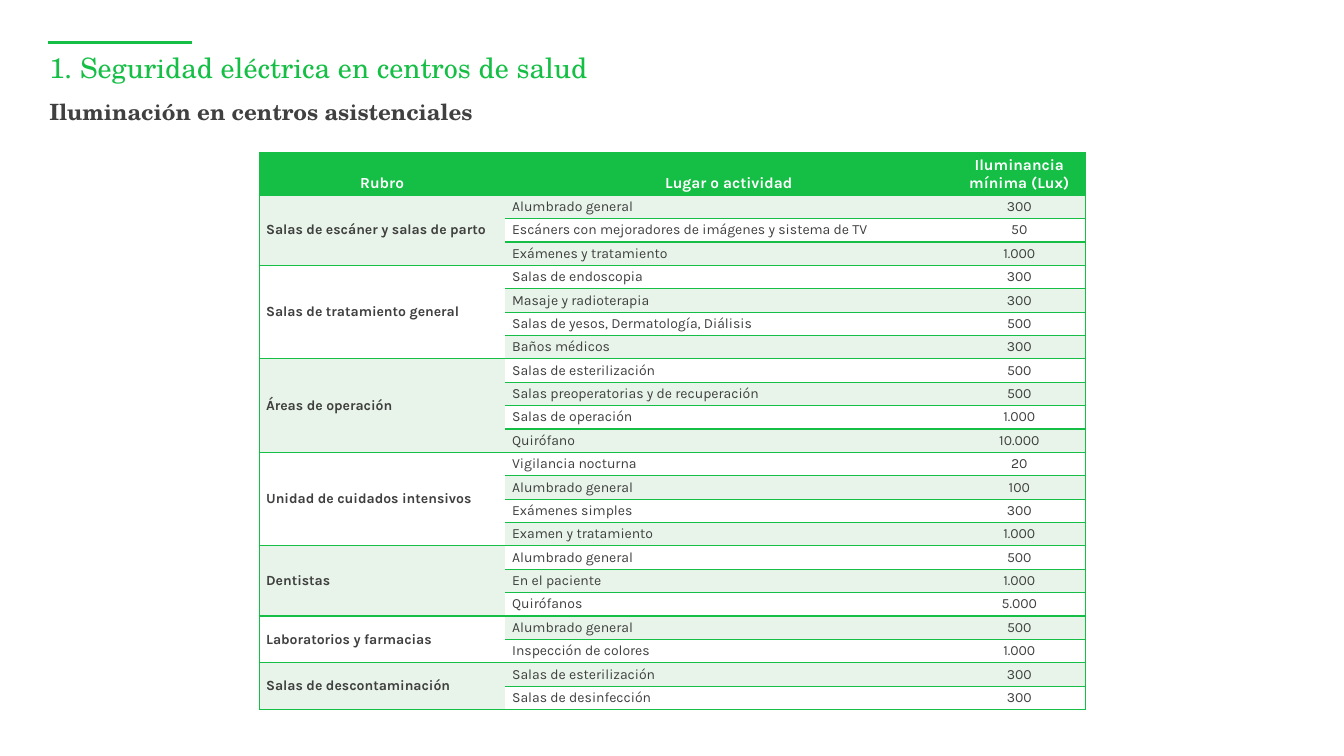
from dataclasses import dataclass

from lxml import etree
from pptx import Presentation
from pptx.dml import color
from pptx.enum import shapes, text
from pptx.oxml import ns
from pptx.util import Inches, Pt


@dataclass(frozen=True)
class Theme:
    green: str = "15BF45"
    tint: str = "E8F4E9"
    white: str = "FFFFFF"
    dark: str = "404040"
    table_text: str = "3F3F3F"
    serif: str = "TeX Gyre Schola"
    sans: str = "Karla"
    title_size: float = 20
    subtitle_size: float = 16
    header_size: float = 11
    body_size: float = 10
    accent_width: float = 1.75
    border_width: float = 1


THEME = Theme()
NO_STYLE = "{2D5ABB26-0587-4C30-8999-92F81FD0307C}"
HEADERS = ("Rubro", "Lugar o actividad", "Iluminancia mínima (Lux)")
COLUMN_WIDTHS = (2.44, 4.44, 1.32)
HEADER_HEIGHT = 0.42
GROUPS = (
    ("Salas de escáner y salas de parto", (
        ("Alumbrado general", "300"),
        ("Escáners con mejoradores de imágenes y sistema de TV", "50"),
        ("Exámenes y tratamiento", "1.000"))),
    ("Salas de tratamiento general", (
        ("Salas de endoscopia", "300"),
        ("Masaje y radioterapia", "300"),
        ("Salas de yesos, Dermatología, Diálisis", "500"),
        ("Baños médicos", "300"))),
    ("Áreas de operación", (
        ("Salas de esterilización", "500"),
        ("Salas preoperatorias y de recuperación", "500"),
        ("Salas de operación", "1.000"),
        ("Quirófano", "10.000"))),
    ("Unidad de cuidados intensivos", (
        ("Vigilancia nocturna", "20"),
        ("Alumbrado general", "100"),
        ("Exámenes simples", "300"),
        ("Examen y tratamiento", "1.000"))),
    ("Dentistas", (
        ("Alumbrado general", "500"),
        ("En el paciente", "1.000"),
        ("Quirófanos", "5.000"))),
    ("Laboratorios y farmacias", (
        ("Alumbrado general", "500"),
        ("Inspección de colores", "1.000"))),
    ("Salas de descontaminación", (
        ("Salas de esterilización", "300"),
        ("Salas de desinfección", "300"))),
)


def rgb(value):
    return color.RGBColor.from_string(value)


def write(frame, words, *, font, size, fill, bold=False, align="LEFT", spacing=1.0):
    frame.word_wrap = True
    paragraph = frame.paragraphs[0]
    paragraph.alignment = getattr(text.PP_ALIGN, align)
    paragraph.line_spacing = spacing
    run = paragraph.add_run()
    run.text = words
    run.font.name = font
    run.font.size = Pt(size)
    run.font.bold = bold
    run.font.color.rgb = rgb(fill)


def add_heading(slide, left, top, width, height, words, **style):
    frame = slide.shapes.add_textbox(
        Inches(left), Inches(top), Inches(width), Inches(height)).text_frame
    frame.margin_left = frame.margin_right = frame.margin_top = frame.margin_bottom = 0
    write(frame, words, font=THEME.serif, spacing=0.9, **style)


def add_title_block(slide, left, top, width):
    accent = slide.shapes.add_connector(
        shapes.MSO_CONNECTOR.STRAIGHT,
        Inches(left), Inches(top), Inches(left + 1.42), Inches(top))
    accent.line.color.rgb = rgb(THEME.green)
    accent.line.width = Pt(THEME.accent_width)
    etree.SubElement(accent.element.spPr, ns.qn("a:effectLst"))
    add_heading(slide, left + 0.01, top + 0.12, width, 0.57,
                "1. Seguridad eléctrica en centros de salud",
                size=THEME.title_size, fill=THEME.green)
    add_heading(slide, left + 0.01, top + 0.58, width, 0.39,
                "Iluminación en centros asistenciales",
                size=THEME.subtitle_size, fill=THEME.dark, bold=True)


def set_borders(cell, sides):
    properties = cell._tc.get_or_add_tcPr()
    for position, side in enumerate(side for side in "LRTB" if side in sides):
        line = etree.Element(ns.qn(f"a:ln{side}"), w=str(Pt(THEME.border_width)))
        fill = etree.SubElement(line, ns.qn("a:solidFill"))
        etree.SubElement(fill, ns.qn("a:srgbClr"), val=THEME.green)
        properties.insert(position, line)


def fill_cell(cell, words, *, background, borders, anchor="MIDDLE", **style):
    cell.margin_left = cell.margin_right = Inches(0.07)
    cell.margin_top = cell.margin_bottom = Inches(0.03)
    cell.vertical_anchor = getattr(text.MSO_ANCHOR, anchor)
    cell.fill.solid()
    cell.fill.fore_color.rgb = rgb(background)
    set_borders(cell, borders)
    write(cell.text_frame, words, font=THEME.sans, **style)


def add_lighting_table(slide, left, top, width, height):
    row_count = sum(len(places) for _, places in GROUPS)
    frame = slide.shapes.add_table(
        row_count + 1, len(HEADERS),
        Inches(left), Inches(top), Inches(width), Inches(height))
    table = frame.table
    table.horz_banding = False
    table._tbl.tblPr.find(ns.qn("a:tableStyleId")).text = NO_STYLE
    for column, column_width in zip(table.columns, COLUMN_WIDTHS):
        column.width = Inches(column_width)
    for row in table.rows:
        row.height = Inches((height - HEADER_HEIGHT) / row_count)
    table.rows[0].height = Inches(HEADER_HEIGHT)

    edges = ("LTB", "TB", "RTB")
    for index, header in enumerate(HEADERS):
        fill_cell(table.cell(0, index), header, background=THEME.green,
                  borders=edges[index], anchor="BOTTOM", size=THEME.header_size,
                  fill=THEME.white, bold=True, align="CENTER")

    body = {"size": THEME.body_size, "fill": THEME.table_text}
    bands = (THEME.tint, THEME.white)
    row = 1
    for group_index, (group, places) in enumerate(GROUPS):
        heading = table.cell(row, 0)
        heading.merge(table.cell(row + len(places) - 1, 0))
        fill_cell(heading, group, background=bands[group_index % 2],
                  borders=edges[0], bold=True, **body)
        for offset, (place, lux) in enumerate(places):
            if offset:
                set_borders(table.cell(row, 0), "L")
            background = bands[(row - 1) % 2]
            fill_cell(table.cell(row, 1), place, background=background,
                      borders=edges[1], **body)
            fill_cell(table.cell(row, 2), lux, background=background,
                      borders=edges[2], align="CENTER", **body)
            row += 1


def main():
    presentation = Presentation()
    presentation.slide_width = Inches(13.33)
    presentation.slide_height = Inches(7.5)
    slide = presentation.slides.add_slide(presentation.slide_layouts[6])
    add_title_block(slide, 0.48, 0.42, 10.79)
    add_lighting_table(slide, 2.57, 1.51, sum(COLUMN_WIDTHS), 5.53)
    presentation.save("out.pptx")


if __name__ == "__main__":
    main()
